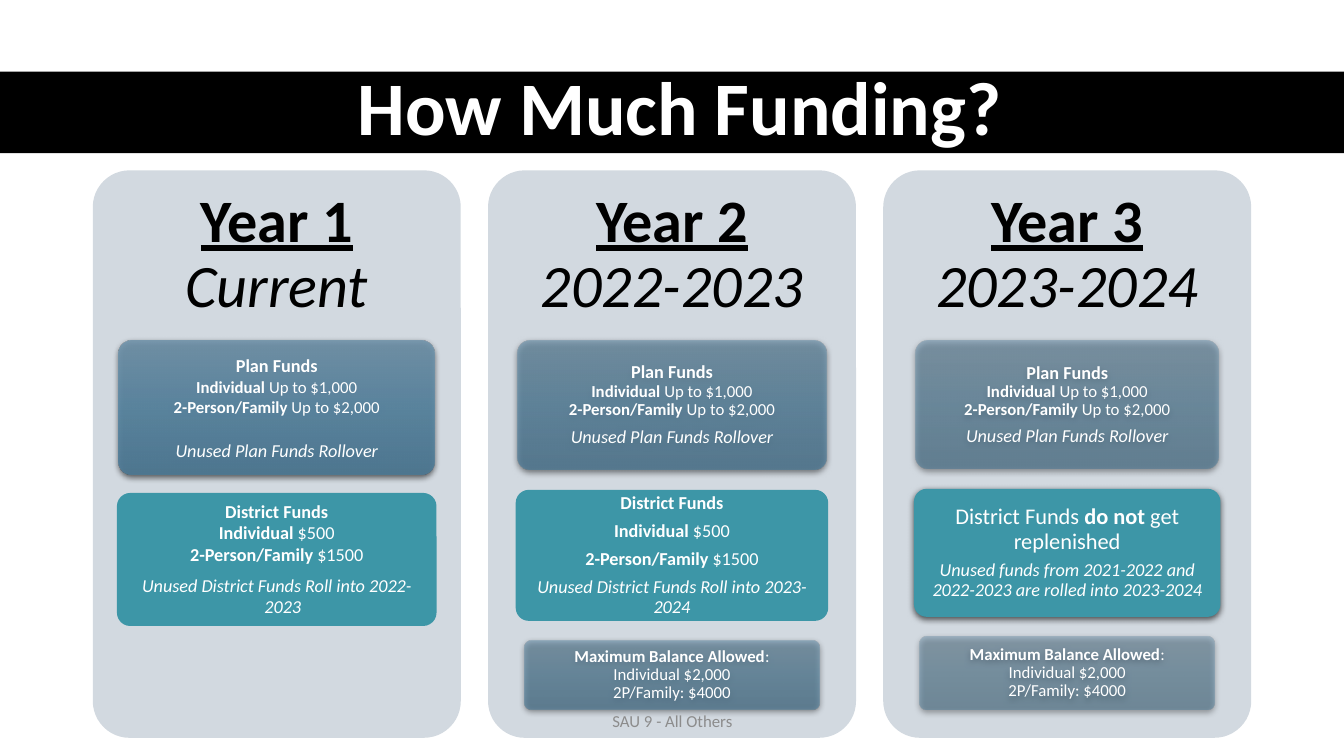
"""Build the funding slide: three year cards with stacked fund boxes."""
from pptx import Presentation
from pptx import util as u
from pptx.dml.color import RGBColor
from pptx.enum import shapes, text
from pptx.oxml import parse_xml
from pptx.oxml.ns import nsdecls, qn

BLACK = RGBColor(0x00, 0x00, 0x00)
WHITE = RGBColor(0xFF, 0xFF, 0xFF)
CARD_GRAY = RGBColor(0xD2, 0xD9, 0xE0)
TEAL = RGBColor(0x3D, 0x96, 0xA7)
FOOTER_GRAY = RGBColor(0x8C, 0x8C, 0x8C)
BLUES = ((0, RGBColor(0x72, 0x94, 0xAB)), (50, RGBColor(0x5A, 0x88, 0xA4)),
         (100, RGBColor(0x4D, 0x79, 0x95)))
FONT = "Calibri"

TITLE = "How Much Funding?"
FOOTER = "SAU 9 - All Others"

PLAN_LIMITS = [("Plan Funds\n", 13, "b"), ("Individual ", 12, "b"), ("Up to $1,000\n", 12, ""),
               ("2-Person/Family ", 12, "b"), ("Up to $2,000", 12, "")]
PLAN = [PLAN_LIMITS, [("Unused Plan Funds Rollover", 13, "i")]]
DISTRICT = [[("District Funds", 13, "b")],
            [("Individual ", 13, "b"), ("$500", 13, "")],
            [("2-Person/Family ", 13, "b"), ("$1500", 13, "")]]
BALANCE = [[("Maximum Balance Allowed", 12, "b"),
            (":\nIndividual $2,000\n2P/Family: $4000", 12, "")]]
NO_REFILL = [[("District Funds ", 16, ""), ("do not ", 16, "b"), ("get replenished", 16, "")],
             [("Unused funds from 2021-2022 and 2022-2023 are rolled into 2023-2024", 13, "i")]]


def rollover(years):
    return [[(f"Unused District Funds Roll into {years}", 13, "i")]]


YEARS = [
    ("Year 1", "Current", [
        dict(top=3.38, width=3.13, height=1.33, opacity=90, paragraphs=PLAN,
             spacing=1, after=(16, 0)),
        dict(top=4.89, width=3.17, height=1.32, shadow=False, spacing=1, after=(0, 0, 6, 0),
             paragraphs=DISTRICT + rollover("2022-2023"), anchor="TOP", hanging=0.12)]),
    ("Year 2", "2022-2023", [
        dict(top=3.38, width=3.06, height=1.28, opacity=75, paragraphs=PLAN, after=(6, 6)),
        dict(top=4.86, width=3.1, height=1.3, shadow=False, after=(6, 6, 6, 6),
             paragraphs=DISTRICT + rollover("2023-2024")),
        dict(top=6.36, width=2.92, height=0.68, opacity=65, paragraphs=BALANCE)]),
    ("Year 3", "2023-2024", [
        dict(top=3.38, width=3, height=1.27, opacity=60, paragraphs=PLAN, after=(5, 5)),
        dict(top=4.85, width=3.04, height=1.27, paragraphs=NO_REFILL, after=(5, 5)),
        dict(top=6.32, width=2.92, height=0.72, opacity=50, paragraphs=BALANCE)]),
]

SLIDE_W, SLIDE_H = 13.33, 7.5
CARD_W, CARD_H, CARD_TOP, CARD_GAP = 3.65, 5.63, 1.69, 0.27
HEADING_H = CARD_H * 0.3
CARDS_LEFT = (SLIDE_W - 3 * CARD_W - 2 * CARD_GAP) / 2


def inches(*lengths):
    return [u.Inches(length) for length in lengths]


def write(holder, paragraphs, color, spacing=0.9, after=(0,), anchor="MIDDLE",
          inset=(0.04, 0.03), hanging=0):
    frame = holder.text_frame
    side, edge = inches(*inset)
    frame_format = dict(word_wrap=True, vertical_anchor=getattr(text.MSO_ANCHOR, anchor),
                        margin_left=side, margin_right=side,
                        margin_top=edge, margin_bottom=edge)
    for key, value in frame_format.items():
        setattr(frame, key, value)
    for row, (runs, gap) in enumerate(zip(paragraphs, after)):
        line = frame.add_paragraph() if row else frame.paragraphs[0]
        line_format = dict(alignment=text.PP_ALIGN.CENTER, line_spacing=spacing,
                           space_before=u.Pt(0), space_after=u.Pt(gap))
        for key, value in line_format.items():
            setattr(line, key, value)
        if hanging and row:
            line._p.get_or_add_pPr().set("marL", str(u.Inches(hanging)))
            line._p.get_or_add_pPr().set("indent", str(-u.Inches(hanging)))
        for words, size, style in runs:
            for part, piece in enumerate(words.split("\n")):
                if part:
                    line.add_line_break()
                if piece:
                    run = line.add_run()
                    run.text = piece
                    run_format = dict(name=FONT, size=u.Pt(size), bold="b" in style,
                                      italic="i" in style, underline="u" in style)
                    for key, value in run_format.items():
                        setattr(run.font, key, value)
                    run.font.color.rgb = color


def add_panel(slide, kind, box, color):
    panel = slide.shapes.add_shape(kind, *inches(*box))
    panel.fill.solid()
    panel.fill.fore_color.rgb = color
    panel.line.fill.background()
    panel.shadow.inherit = False
    if kind == shapes.MSO_SHAPE.ROUNDED_RECTANGLE:
        panel.adjustments[0] = 0.1
    return panel


def shade(panel, opacity):
    stops = "".join(f'<a:gs pos="{place * 1000}"><a:srgbClr val="{blue}">'
                    f'<a:alpha val="{opacity * 1000}"/></a:srgbClr></a:gs>'
                    for place, blue in BLUES)
    gradient = parse_xml(f'<a:gradFill {nsdecls("a")} rotWithShape="1"><a:gsLst>{stops}</a:gsLst>'
                         '<a:lin ang="5400000" scaled="0"/></a:gradFill>')
    properties = panel._element.spPr
    properties.replace(properties.find(qn("a:solidFill")), gradient)


def cast_shadow(panel):
    panel._element.spPr.find(qn("a:effectLst")).append(parse_xml(
        f'<a:outerShdw {nsdecls("a")} blurRad="{u.Pt(4.5)}" dist="{u.Pt(1.5)}" dir="5400000" '
        f'rotWithShape="0"><a:srgbClr val="{BLACK}"><a:alpha val="63000"/></a:srgbClr>'
        '</a:outerShdw>'))


def add_fund(slide, center, top, width, height, paragraphs, opacity=None, shadow=True, **layout):
    fund = add_panel(slide, shapes.MSO_SHAPE.ROUNDED_RECTANGLE,
                     (center - width / 2, top, width, height), TEAL)
    if opacity:
        shade(fund, opacity)
    if shadow:
        cast_shadow(fund)
    write(fund, paragraphs, WHITE, **layout)


def add_year(slide, column, year, period, funds):
    left = CARDS_LEFT + column * (CARD_W + CARD_GAP)
    add_panel(slide, shapes.MSO_SHAPE.ROUNDED_RECTANGLE,
              (left, CARD_TOP, CARD_W, CARD_H), CARD_GRAY)
    heading = slide.shapes.add_textbox(*inches(left, CARD_TOP, CARD_W, HEADING_H))
    write(heading, [[(year + "\n", 43, "bu"), (period, 43, "i")]], BLACK, inset=(0.18, 0.18))
    for fund in funds:
        add_fund(slide, left + CARD_W / 2, **fund)


def main():
    deck = Presentation()
    deck.slide_width, deck.slide_height = inches(SLIDE_W, SLIDE_H)
    slide = deck.slides.add_slide(deck.slide_layouts[5])
    title = slide.shapes.title
    band = add_panel(slide, shapes.MSO_SHAPE.RECTANGLE, (0, 0.71, SLIDE_W, 0.81), BLACK)
    title._element.addprevious(band._element)
    title.left, title.top, title.width, title.height = inches(0.61, 0.7, 12.26, 0.81)
    write(title, [[(TITLE, 54, "b")]], WHITE, inset=(0.1, 0.05))
    title.text_frame.auto_size = text.MSO_AUTO_SIZE.NONE
    for column, year in enumerate(YEARS):
        add_year(slide, column, *year)
    footer = slide.shapes.add_textbox(*inches(4.42, 6.95, 4.5, 0.4))
    write(footer, [[(FOOTER, 12, "")]], FOOTER_GRAY, spacing=1, inset=(0.1, 0.05))
    deck.save("out.pptx")


if __name__ == "__main__":
    main()
